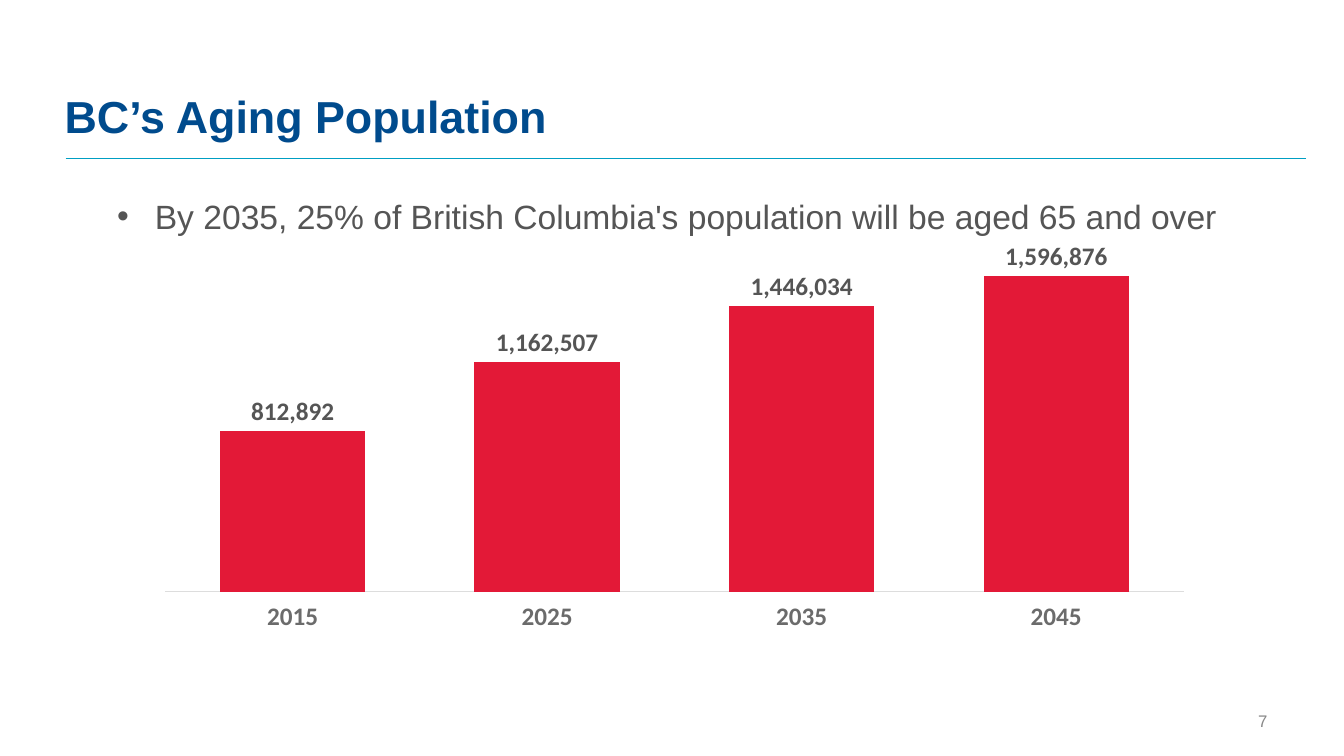
from dataclasses import dataclass

from lxml import etree
from pptx import Presentation
from pptx.chart.data import CategoryChartData
from pptx.dml.color import RGBColor
from pptx.enum.chart import XL_CHART_TYPE, XL_LABEL_POSITION, XL_TICK_LABEL_POSITION, XL_TICK_MARK
from pptx.enum.shapes import MSO_CONNECTOR
from pptx.enum.text import MSO_ANCHOR, MSO_AUTO_SIZE, PP_ALIGN
from pptx.oxml import parse_xml
from pptx.oxml.ns import nsdecls, qn
from pptx.util import Pt

COLUMNS = XL_CHART_TYPE.COLUMN_CLUSTERED
OUTSIDE = XL_LABEL_POSITION.OUTSIDE_END
LOW = XL_TICK_LABEL_POSITION.LOW
NO_TICK = XL_TICK_MARK.NONE
STRAIGHT = MSO_CONNECTOR.STRAIGHT
MIDDLE, TOP = MSO_ANCHOR.MIDDLE, MSO_ANCHOR.TOP
LEFT, CENTER, RIGHT = PP_ALIGN.LEFT, PP_ALIGN.CENTER, PP_ALIGN.RIGHT
NO_FIT = MSO_AUTO_SIZE.NONE

EMU_PER_PX = 9144  # 100 px to the inch


@dataclass(frozen=True)
class Theme:
    text_font: str = "Arial"
    chart_font: str = "Calibri"
    title: str = "004B8D"
    body: str = "555555"
    number: str = "898989"
    rule: str = "009FC3"
    bar: str = "E31937"
    axis_text: str = "6B6B6B"
    axis_line: str = "DDDDDD"
    chart_text: str = "1C1C1C"
    title_size: int = 32
    body_size: int = 24
    chart_label_size: int = 18
    number_size: int = 12
    chart_size: int = 10


@dataclass(frozen=True)
class Box:
    x: int
    y: int
    w: int
    h: int

    def emu(self) -> tuple[int, ...]:
        return tuple(px(n) for n in (self.x, self.y, self.w, self.h))


@dataclass(frozen=True)
class TextStyle:
    size: int
    color: str
    bold: bool = False
    align: PP_ALIGN = LEFT
    anchor: MSO_ANCHOR = MIDDLE


THEME = Theme()
POPULATION = {"2015": 812892, "2025": 1162507, "2035": 1446034, "2045": 1596876}


def px(n: int) -> int:
    return n * EMU_PER_PX


def style_font(font, size: int, color: str, bold: bool, name: str) -> None:
    font.size, font.bold, font.name = Pt(size), bold, name
    font.color.rgb = RGBColor.from_string(color)


def write_text(sp, box: Box, text: str, style: TextStyle) -> None:
    sp.left, sp.top, sp.width, sp.height = box.emu()
    tf = sp.text_frame
    tf.text = text
    tf.word_wrap = True
    tf.auto_size = NO_FIT
    tf.vertical_anchor = style.anchor
    p = tf.paragraphs[0]
    p.alignment = style.align
    p.space_before = Pt(0)
    style_font(p.runs[0].font, style.size, style.color, style.bold, THEME.text_font)


def remove_bullet(p) -> None:
    pPr = p._p.get_or_add_pPr()
    pPr.set("marL", "0")
    pPr.set("indent", "0")
    etree.SubElement(pPr, qn("a:buNone"))


def add_rule(s, x1: int, x2: int, y: int) -> None:
    line = s.shapes.add_connector(STRAIGHT, px(x1), px(y), px(x2), px(y))
    line.line.color.rgb = RGBColor.from_string(THEME.rule)
    line.line.width = Pt(1)
    etree.SubElement(line._element.spPr, qn("a:effectLst"))


def place_plot(chart, x: float, y: float, w: float, h: float) -> None:
    plot_area = chart._chartSpace.chart.plotArea
    for old in plot_area.findall(qn("c:layout")):
        plot_area.remove(old)
    sizes = "".join(f'<c:{k} val="{v}"/>' for k, v in zip("xywh", (x, y, w, h)))
    plot_area.insert(0, parse_xml(
        f'<c:layout {nsdecls("c")}><c:manualLayout><c:layoutTarget val="inner"/>'
        f'<c:xMode val="edge"/><c:yMode val="edge"/>{sizes}</c:manualLayout></c:layout>'))


def add_population_chart(s, box: Box) -> None:
    data = CategoryChartData(number_format="#,##0")
    data.categories = list(POPULATION)
    data.add_series("Series 1", list(POPULATION.values()))
    chart = s.shapes.add_chart(COLUMNS, *box.emu(), data).chart
    style_font(chart.font, THEME.chart_size, THEME.chart_text, False, THEME.chart_font)
    chart.has_legend = False
    chart.has_title = False

    # Axes
    values = chart.value_axis
    values.minimum_scale, values.maximum_scale = 0, 1800000
    values.has_major_gridlines = False
    values.visible = False
    years = chart.category_axis
    years.major_tick_mark = years.minor_tick_mark = NO_TICK
    years.tick_label_position = LOW
    years.format.line.color.rgb = RGBColor.from_string(THEME.axis_line)
    years.format.line.width = Pt(0.75)
    style_font(years.tick_labels.font, THEME.chart_label_size, THEME.axis_text,
               True, THEME.chart_font)

    # Bars and their values
    plot = chart.plots[0]
    plot.gap_width = 75
    plot.vary_by_categories = False
    bars = plot.series[0]
    bars.format.fill.solid()
    bars.format.fill.fore_color.rgb = RGBColor.from_string(THEME.bar)
    labels = bars.data_labels
    labels.show_value = True
    labels.position = OUTSIDE
    labels.number_format, labels.number_format_is_linked = "#,##0", False
    style_font(labels.font, THEME.chart_label_size, THEME.body, True, THEME.chart_font)
    place_plot(chart, 0.02, 0.02, 0.96, 0.87)


def main() -> None:
    prs = Presentation()
    prs.slide_width, prs.slide_height = px(1333), px(750)
    s = prs.slides.add_slide(prs.slide_layouts[1])

    # Title and rule
    write_text(s.shapes.title, Box(54, 42, 1150, 145), "BC’s Aging Population",
               TextStyle(THEME.title_size, THEME.title, bold=True))
    add_rule(s, 65, 1295, 157)

    # Key message
    body = s.placeholders[1]
    remove_bullet(body.text_frame.paragraphs[0])
    write_text(body, Box(65, 189, 1193, 436),
               "By 2035, 25% of British Columbia's population will be aged 65 and over",
               TextStyle(THEME.body_size, THEME.body, align=CENTER, anchor=TOP))

    # Chart
    add_population_chart(s, Box(143, 226, 1052, 406))

    # Slide number
    number_box = Box(956, 695, 311, 40)
    write_text(s.shapes.add_textbox(*number_box.emu()), number_box, "7",
               TextStyle(THEME.number_size, THEME.number, align=RIGHT))

    prs.save("out.pptx")


if __name__ == "__main__":
    main()
